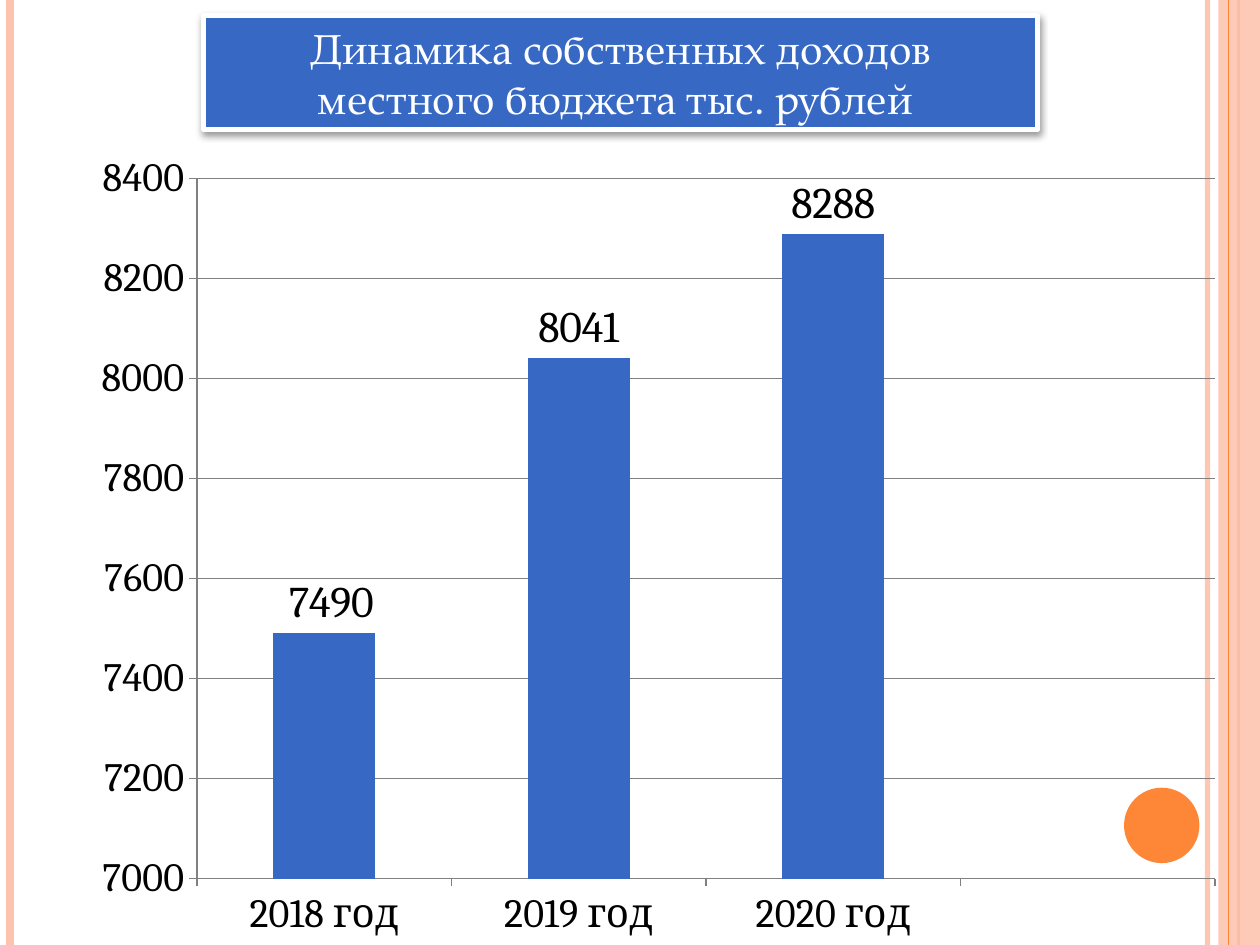
from lxml.etree import SubElement
from pptx import Presentation
from pptx.chart.data import CategoryChartData
from pptx.dml.color import RGBColor
from pptx.enum.chart import XL_CHART_TYPE, XL_LABEL_POSITION, XL_TICK_MARK
from pptx.enum.shapes import MSO_CONNECTOR, MSO_SHAPE
from pptx.enum.text import MSO_ANCHOR, PP_ALIGN
from pptx.oxml import parse_xml
from pptx.oxml.ns import nsdecls, qn
from pptx.util import Cm, Pt

PEACH = RGBColor(0xFE, 0xC3, 0xAE)
ORANGE = RGBColor(0xFE, 0x86, 0x37)
BLUE = RGBColor(0x36, 0x68, 0xC4)
WHITE = RGBColor(0xFF, 0xFF, 0xFF)
BLACK = RGBColor(0, 0, 0)
GREY = RGBColor(0x80, 0x80, 0x80)


def set_alpha(properties, percent):
    color = next(properties.iter(qn("a:srgbClr")))
    SubElement(color, qn("a:alpha")).set("val", str(percent * 1000))


def add_filled(kind, left, top, width, height, color):
    shape = slide.shapes.add_shape(kind, Cm(left), Cm(top), Cm(width), Cm(height))
    shape.shadow.inherit = False
    shape.fill.solid()
    shape.fill.fore_color.rgb = color
    shape.line.fill.background()
    return shape


prs = Presentation()
prs.slide_width, prs.slide_height = Cm(25.4), Cm(19.05)
slide = prs.slides.add_slide(prs.slide_layouts[6])

# Side band and vertical stripes
band = add_filled(MSO_SHAPE.RECTANGLE, 24.56, 0, 0.84, 19.05, PEACH)
set_alpha(band.fill._xPr, 87)
stripes = [(24.34, PEACH, 3, 93), (0.21, PEACH, 4.5, 100),
           (24.97, ORANGE, 1.5, 100), (24.77, ORANGE, 0.75, 100)]
for x, color, weight, opacity in stripes:
    stripe = slide.shapes.add_connector(
        MSO_CONNECTOR.STRAIGHT, Cm(x), 0, Cm(x), prs.slide_height)
    stripe.line.color.rgb = color
    stripe.line.width = Pt(weight)
    properties = stripe._element.spPr
    if opacity < 100:
        set_alpha(properties, opacity)
    SubElement(properties, qn("a:effectLst"))
    # The widest orange stripe lies beneath the translucent band
    if weight == 1.5:
        band._element.addprevious(stripe._element)

# Orange disc
add_filled(MSO_SHAPE.OVAL, 22.66, 15.88, 1.52, 1.52, ORANGE)

# Heading
heading = add_filled(MSO_SHAPE.RECTANGLE, 4.11, 0.31, 16.81, 2.31, BLUE)
heading.line.color.rgb = WHITE
heading.line.width = Pt(2.75)
effects = heading._element.spPr.find(qn("a:effectLst"))
effects.append(parse_xml(
    f'<a:outerShdw {nsdecls("a")} blurRad="50800" dist="25400" dir="5400000" '
    'rotWithShape="0"><a:srgbClr val="000000"><a:alpha val="40000"/>'
    '</a:srgbClr></a:outerShdw>'))
frame = heading.text_frame
for name, value in {"word_wrap": True, "vertical_anchor": MSO_ANCHOR.MIDDLE,
                    "margin_left": Cm(1), "margin_right": Cm(1)}.items():
    setattr(frame, name, value)
paragraph = frame.paragraphs[0]
paragraph.alignment = PP_ALIGN.CENTER
run = paragraph.add_run()
run.text = "Динамика собственных доходов местного бюджета тыс. рублей "
run.font.color.rgb = WHITE
for name, value in {"name": "TeX Gyre Pagella", "size": Pt(24)}.items():
    setattr(run.font, name, value)

# Revenue chart, with an empty fourth slot
revenue = CategoryChartData(number_format="0")
revenue.categories = ["2018 год", "2019 год", "2020 год", ""]
revenue.add_series("Series 1", [7490, 8041, 8288, None])
chart = slide.shapes.add_chart(
    XL_CHART_TYPE.COLUMN_CLUSTERED, Cm(0.81), Cm(2.77), Cm(23.95), Cm(16.79),
    revenue).chart
chart.has_title = False
chart.has_legend = False
for name, value in {"name": "Cambria", "size": Pt(23), "bold": False}.items():
    setattr(chart.font, name, value)
chart.font.color.rgb = BLACK

# Columns and their values
columns = chart.plots[0]
columns.vary_by_categories = False
columns.gap_width = 150
bars = columns.series[0]
bars.format.fill.solid()
bars.format.fill.fore_color.rgb = BLUE
values = bars.data_labels
for name, value in {"show_value": True, "number_format": "0",
                    "number_format_is_linked": False,
                    "position": XL_LABEL_POSITION.OUTSIDE_END}.items():
    setattr(values, name, value)
first_value = bars.points[0].data_label
first_value.position = XL_LABEL_POSITION.OUTSIDE_END
for label in (values, first_value):
    for name, value in {"name": "Cambria", "size": Pt(25), "bold": False}.items():
        setattr(label.font, name, value)
    label.font.color.rgb = BLACK

# Axes
scale = {"minimum_scale": 7000, "maximum_scale": 8400, "major_unit": 200,
         "has_major_gridlines": True}
for name, value in scale.items():
    setattr(chart.value_axis, name, value)
chart.value_axis.major_gridlines.format.line.color.rgb = GREY
for axis in (chart.category_axis, chart.value_axis):
    axis.major_tick_mark = XL_TICK_MARK.OUTSIDE
    axis.minor_tick_mark = XL_TICK_MARK.NONE
    axis.format.line.color.rgb = GREY

# Fixed plot area, and the first value nudged to the right
plot_area = chart._chartSpace.chart.plotArea
for old_layout in plot_area.findall(qn("c:layout")):
    plot_area.remove(old_layout)
first_label = next(plot_area.iter(qn("c:dLbl")))
placements = [
    (plot_area, 0, {"layoutTarget": "inner", "xMode": "edge", "yMode": "edge",
                    "x": 0.132, "y": 0.049, "w": 0.857, "h": 0.841}),
    (first_label, 1, {"x": 0.006, "y": 0}),
]
for parent, position, placement in placements:
    layout = parse_xml(f'<c:layout {nsdecls("c")}><c:manualLayout/></c:layout>')
    for name, value in placement.items():
        SubElement(layout[0], qn(f"c:{name}")).set("val", str(value))
    parent.insert(position, layout)

prs.save("out.pptx")
